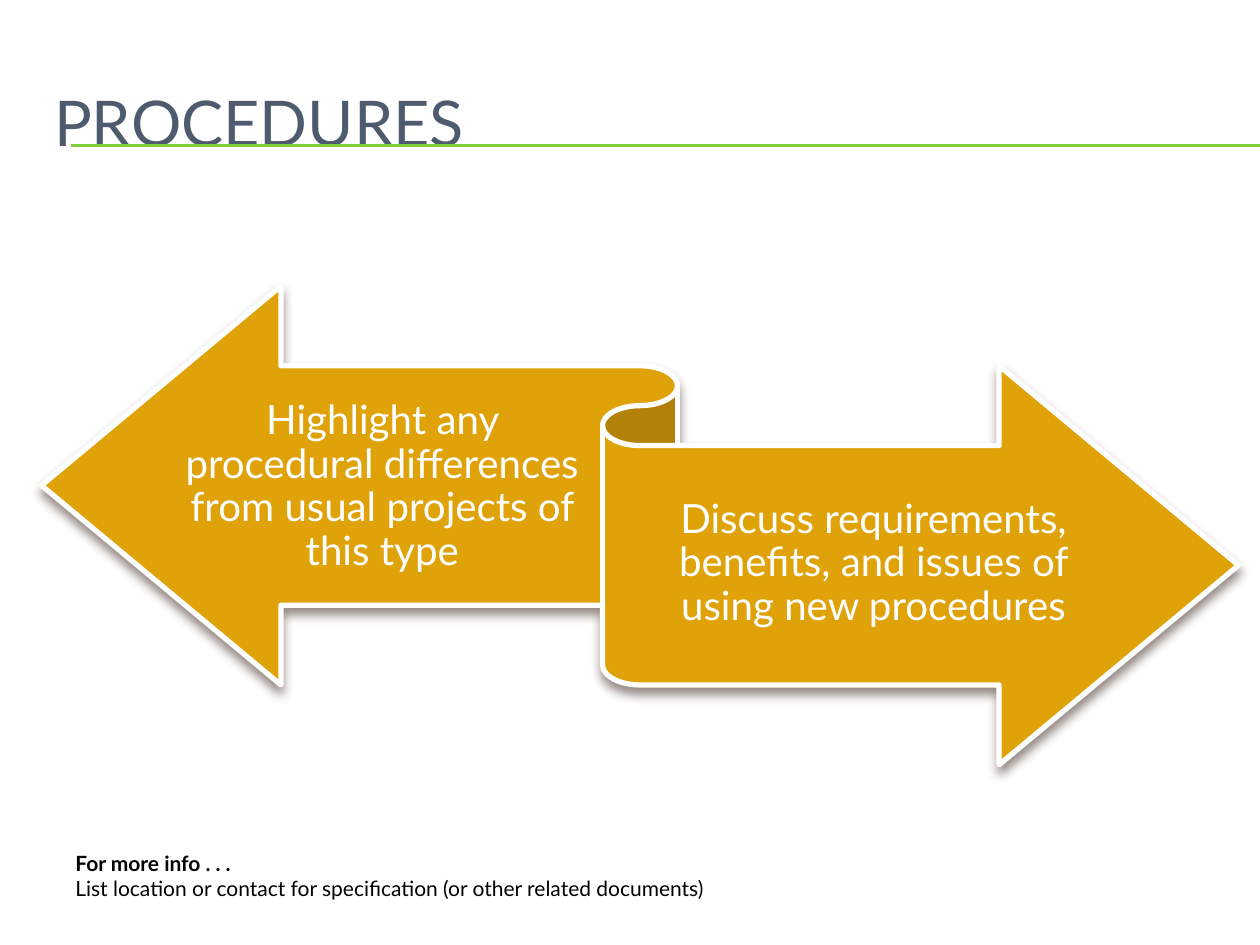
from lxml import etree
from pptx import Presentation
from pptx.dml.color import RGBColor
from pptx.enum.shapes import MSO_CONNECTOR, MSO_SHAPE
from pptx.enum.text import MSO_ANCHOR, MSO_AUTO_SIZE, PP_ALIGN
from pptx.oxml.ns import qn
from pptx.util import Inches, Pt

COLORS = {
    "title": "4E5B6F",
    "rule": "7FD13B",
    "ribbon": "E0A209",
    "white": "FFFFFF",
    "shadow": "4E3B30",
    "black": "000000",
}


def rgb(name):
    return RGBColor.from_string(COLORS[name])


def format_frame(frame, **values):
    settings = {"word_wrap": True, "auto_size": MSO_AUTO_SIZE.NONE, **values}
    for name, value in settings.items():
        setattr(frame, name, value)


def write_text(paragraph, text, color, size, bold=False, **values):
    for name, value in values.items():
        setattr(paragraph, name, value)
    run = paragraph.add_run()
    run.text = text
    for name, value in {"name": "Lato", "size": Pt(size), "bold": bold}.items():
        setattr(run.font, name, value)
    run.font.color.rgb = rgb(color)


def add_rules(slide, left, top, right):
    for offset in (0, 0.01):
        y = Inches(top + offset)
        rule = slide.shapes.add_connector(
            MSO_CONNECTOR.STRAIGHT, Inches(left), y, Inches(right), y)
        rule.line.color.rgb = rgb("rule")
        rule.line.width = Pt(0.75)
        etree.SubElement(rule._element.spPr, qn("a:effectLst"))


def place_title(slide, left, top, width, height):
    title = slide.shapes.title
    box = {"left": left, "top": top, "width": width, "height": height}
    for name, value in box.items():
        setattr(title, name, Inches(value))
    format_frame(title.text_frame, vertical_anchor=MSO_ANCHOR.MIDDLE)
    write_text(title.text_frame.paragraphs[0], "PROCEDURES", "title", 36,
               alignment=PP_ALIGN.LEFT)


def add_shadow(shape, blur, distance, angle, opacity):
    shape.shadow.inherit = False
    effects = shape._element.spPr.find(qn("a:effectLst"))
    shadow = etree.SubElement(
        effects, qn("a:outerShdw"), blurRad=str(Pt(blur)),
        dist=str(Pt(distance)), dir=str(angle * 60000), rotWithShape="0")
    color = etree.SubElement(shadow, qn("a:srgbClr"), val=COLORS["shadow"])
    etree.SubElement(color, qn("a:alpha"), val=str(opacity * 1000))


def add_ribbon(slide, left, top, width, height):
    group = slide.shapes.add_group_shape()
    ribbon = group.shapes.add_shape(
        MSO_SHAPE.LEFT_RIGHT_RIBBON,
        Inches(left), Inches(top), Inches(width), Inches(height))
    ribbon.fill.solid()
    ribbon.fill.fore_color.rgb = rgb("ribbon")
    ribbon.line.color.rgb = rgb("white")
    ribbon.line.width = Pt(3)
    add_shadow(ribbon, blur=6, distance=4, angle=90, opacity=60)

    labels = [
        (1.14, 0.67, 3.13,
         "Highlight any procedural differences from usual projects of this type"),
        (4.75, 1.28, 3.71,
         "Discuss requirements, benefits, and issues of using new procedures"),
    ]
    for x, y, label_width, text in labels:
        label = group.shapes.add_textbox(
            Inches(left + x), Inches(top + y), Inches(label_width), Inches(1.86))
        format_frame(label.text_frame, vertical_anchor=MSO_ANCHOR.MIDDLE,
                     margin_left=0, margin_right=0,
                     margin_top=Inches(0.09), margin_bottom=Inches(0.1))
        write_text(label.text_frame.paragraphs[0], text, "white", 23,
                   alignment=PP_ALIGN.CENTER, line_spacing=0.9)


def add_contact_note(slide, left, top, width, height):
    note = slide.shapes.add_textbox(
        Inches(left), Inches(top), Inches(width), Inches(height))
    frame = note.text_frame
    format_frame(frame)
    write_text(frame.paragraphs[0], "For more info . . .", "black", 12, bold=True)
    write_text(frame.add_paragraph(),
               "List location or contact for specification (or other related documents)",
               "black", 12)


def main():
    presentation = Presentation()
    presentation.slide_width = Inches(10)
    presentation.slide_height = Inches(7.5)
    slide = presentation.slides.add_slide(presentation.slide_layouts[5])
    add_rules(slide, 0.56, 1.15, 10)
    place_title(slide, 0.33, 0.5, 9.5, 0.92)
    add_ribbon(slide, 0.33, 2.27, 9.5, 3.8)
    add_contact_note(slide, 0.5, 6.7, 9, 0.55)
    presentation.save("out.pptx")


if __name__ == "__main__":
    main()
